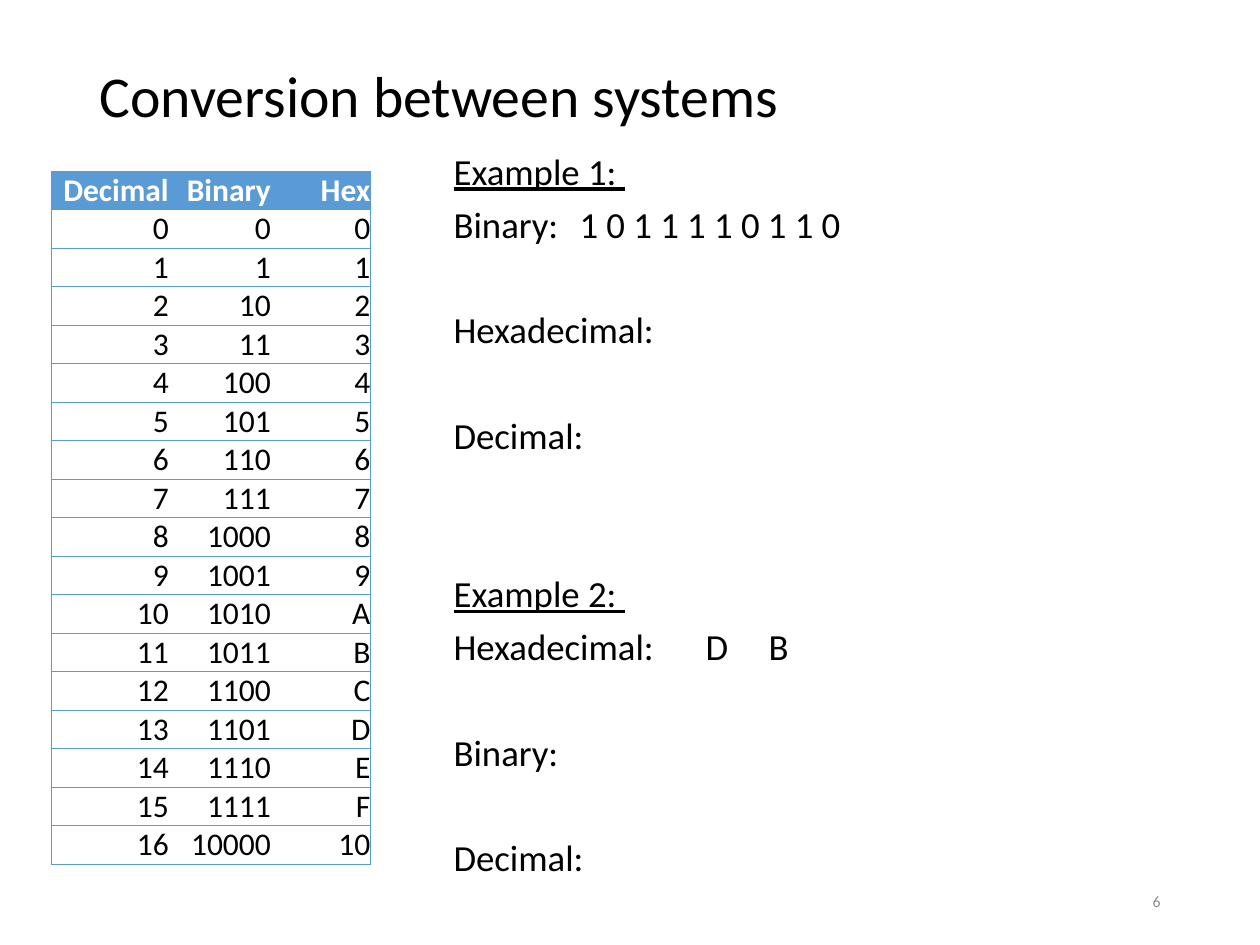
from dataclasses import dataclass

from lxml.etree import SubElement
from pptx import Presentation
from pptx.dml.color import RGBColor
from pptx.enum.text import MSO_ANCHOR, MSO_AUTO_SIZE, PP_ALIGN
from pptx.oxml import parse_xml
from pptx.oxml.ns import nsdecls, qn
from pptx.util import Inches, Pt


@dataclass(frozen=True)
class Theme:
    font: str = "Calibri"
    ink: str = "000000"
    paper: str = "FFFFFF"
    accent: str = "5B9BD5"
    muted: str = "8C8C8C"
    title: float = 33
    body: float = 21
    table: float = 18
    number: float = 9
    rule: float = 0.5
    plain_table: str = "{2D5ABB26-0587-4C30-8999-92F81FD0307C}"


class Deck:
    columns, rows = 100, 75

    def __init__(self, theme):
        self.theme = theme
        self.prs = Presentation()
        self.prs.slide_width, self.prs.slide_height = Inches(10), Inches(7.5)
        self.s = None

    def add_slide(self):
        self.s = self.prs.slides.add_slide(self.prs.slide_layouts[1])

    def box(self, left, top, width, height):
        col = self.prs.slide_width / self.columns
        row = self.prs.slide_height / self.rows
        return [round(v) for v in (left * col, top * row, width * col, height * row)]

    def place(self, sp, box):
        sp.left, sp.top, sp.width, sp.height = self.box(*box)
        tf = sp.text_frame
        tf.word_wrap = True
        tf.auto_size = MSO_AUTO_SIZE.NONE
        return tf

    def run(self, p, text, size, color, bold=False, underline=False):
        r = p.add_run()
        r.text = text
        r.font.name = self.theme.font
        r.font.size = Pt(size)
        r.font.bold = bold
        r.font.underline = underline
        r.font.color.rgb = RGBColor.from_string(color)

    def title(self, text, box):
        tf = self.place(self.s.shapes.title, box)
        tf.vertical_anchor = MSO_ANCHOR.MIDDLE
        p = tf.paragraphs[0]
        p.alignment = PP_ALIGN.LEFT
        p.line_spacing = 0.9
        self.run(p, text, self.theme.title, self.theme.ink)

    def body(self, lines, box, gap, pitch):
        tf = self.place(self.s.placeholders[1], box)
        tf.vertical_anchor = MSO_ANCHOR.TOP
        for i, (text, skipped, underline, tabs) in enumerate(lines):
            p = tf.add_paragraph() if i else tf.paragraphs[0]
            p.line_spacing = 0.9
            p.space_before = Pt(gap + skipped * pitch)
            pPr = p._p.get_or_add_pPr()
            pPr.set("marL", "0")
            pPr.set("indent", "0")
            SubElement(pPr, qn("a:buNone"))
            if tabs:
                stops = SubElement(pPr, qn("a:tabLst"))
                for tab in tabs:
                    SubElement(stops, qn("a:tab"), pos=str(Inches(tab)), algn="l")
            self.run(p, text, self.theme.body, self.theme.ink, underline=underline)

    def slide_number(self, text, box):
        tf = self.place(self.s.shapes.add_textbox(*self.box(*box)), box)
        tf.vertical_anchor = MSO_ANCHOR.MIDDLE
        p = tf.paragraphs[0]
        p.alignment = PP_ALIGN.RIGHT
        self.run(p, text, self.theme.number, self.theme.muted)

    def borders(self, cell, sides):
        tcPr = cell._tc.get_or_add_tcPr()
        for i, side in enumerate(sides):
            tcPr.insert(i, parse_xml(
                f'<a:ln{side} {nsdecls("a")} w="{Pt(self.theme.rule)}"><a:solidFill>'
                f'<a:srgbClr val="{self.theme.accent}"/></a:solidFill></a:ln{side}>'))

    def table(self, data, left, top, widths, row_height):
        last = len(widths) - 1
        box = self.box(left, top, sum(widths), row_height * len(data))
        table = self.s.shapes.add_table(len(data), len(widths), *box).table
        tblPr = table._tbl.tblPr
        tblPr.find(qn("a:tableStyleId")).text = self.theme.plain_table
        table.horz_banding = False
        for column, width in zip(table.columns, widths):
            column.width = self.box(0, 0, width, 0)[2]
        for i, values in enumerate(data):
            for j, value in enumerate(values):
                self.cell(table.cell(i, j), value, header=i == 0)
                sides = ["L"] * (j == 0) + ["R"] * (j == last) + ["T", "B"]
                self.borders(table.cell(i, j), sides)

    def cell(self, cell, text, header):
        cell.margin_left = cell.margin_right = cell.margin_top = cell.margin_bottom = 0
        cell.vertical_anchor = MSO_ANCHOR.MIDDLE
        if header:
            cell.fill.solid()
            cell.fill.fore_color.rgb = RGBColor.from_string(self.theme.accent)
        else:
            cell.fill.background()
        p = cell.text_frame.paragraphs[0]
        p.alignment = PP_ALIGN.RIGHT
        color = self.theme.paper if header else self.theme.ink
        self.run(p, text, self.theme.table, color, bold=header)


def main():
    deck = Deck(Theme())
    deck.add_slide()
    deck.title("Conversion between systems", (6.9, 4, 86.2, 7.7))
    numbers = [(str(n), f"{n:b}", f"{n:X}") for n in range(17)]
    deck.table([("Decimal", "Binary", "Hex")] + numbers, 4.1, 13.6, (9.3, 8.1, 7.9), 3)
    examples = [
        ("Example 1: ", 0, True, ()),
        ("Binary:\t1 0 1 1 1 1 0 1 1 0", 0, False, (2.26,)),
        ("Hexadecimal:", 1, False, ()),
        ("Decimal:", 1, False, ()),
        ("Example 2: ", 2, True, ()),
        ("Hexadecimal:\tD\tB", 0, False, (2.42, 2.8)),
        ("Binary:", 1, False, ()),
        ("Decimal:", 1, False, ()),
    ]
    deck.body(examples, (35, 11.7, 62.6, 61.8), gap=7.5, pitch=30.15)
    deck.slide_number("6", (70.6, 69.5, 22.5, 4))
    deck.prs.save("out.pptx")


if __name__ == "__main__":
    main()
